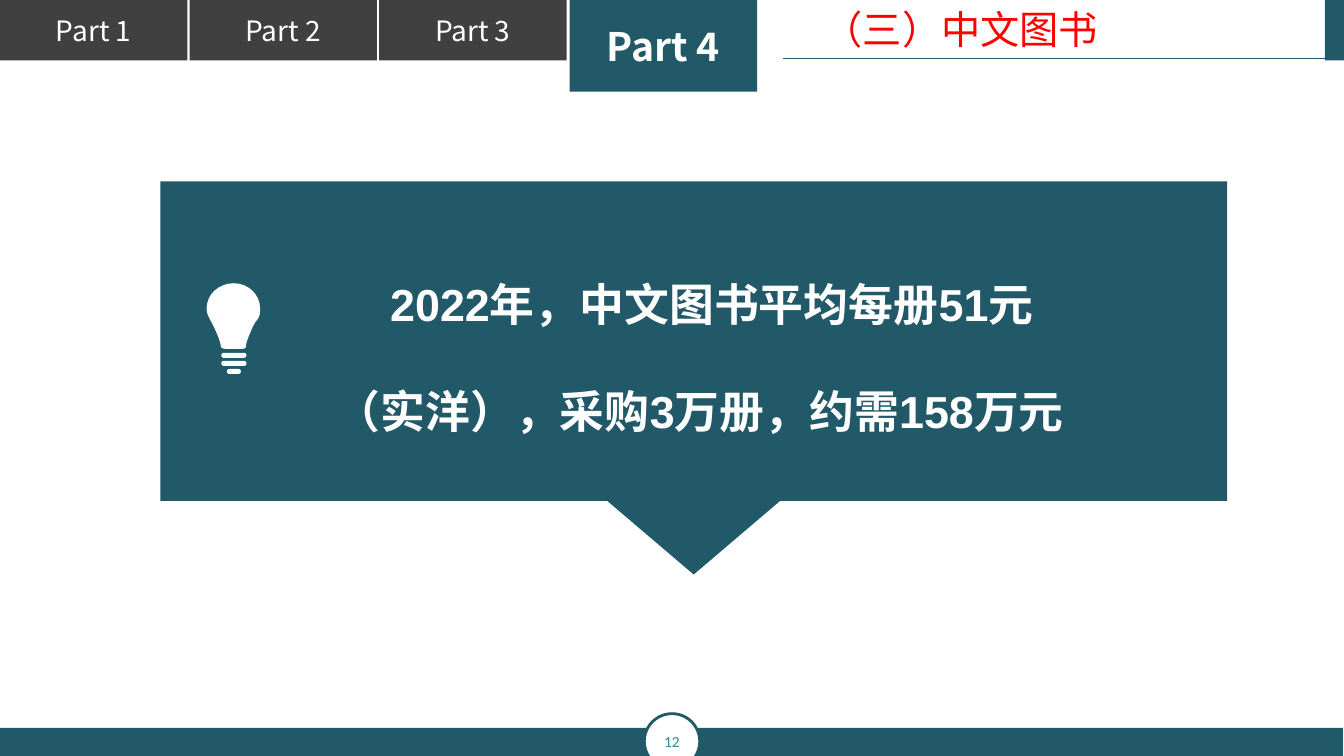
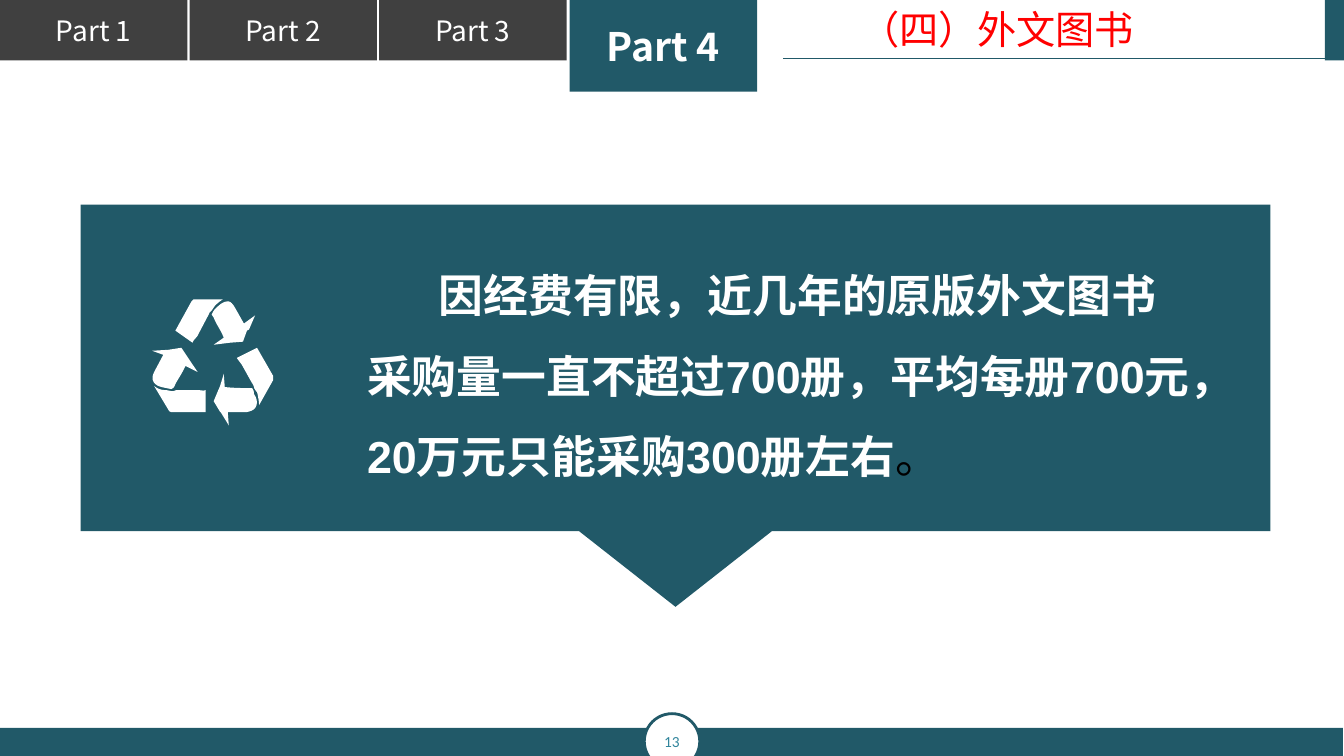
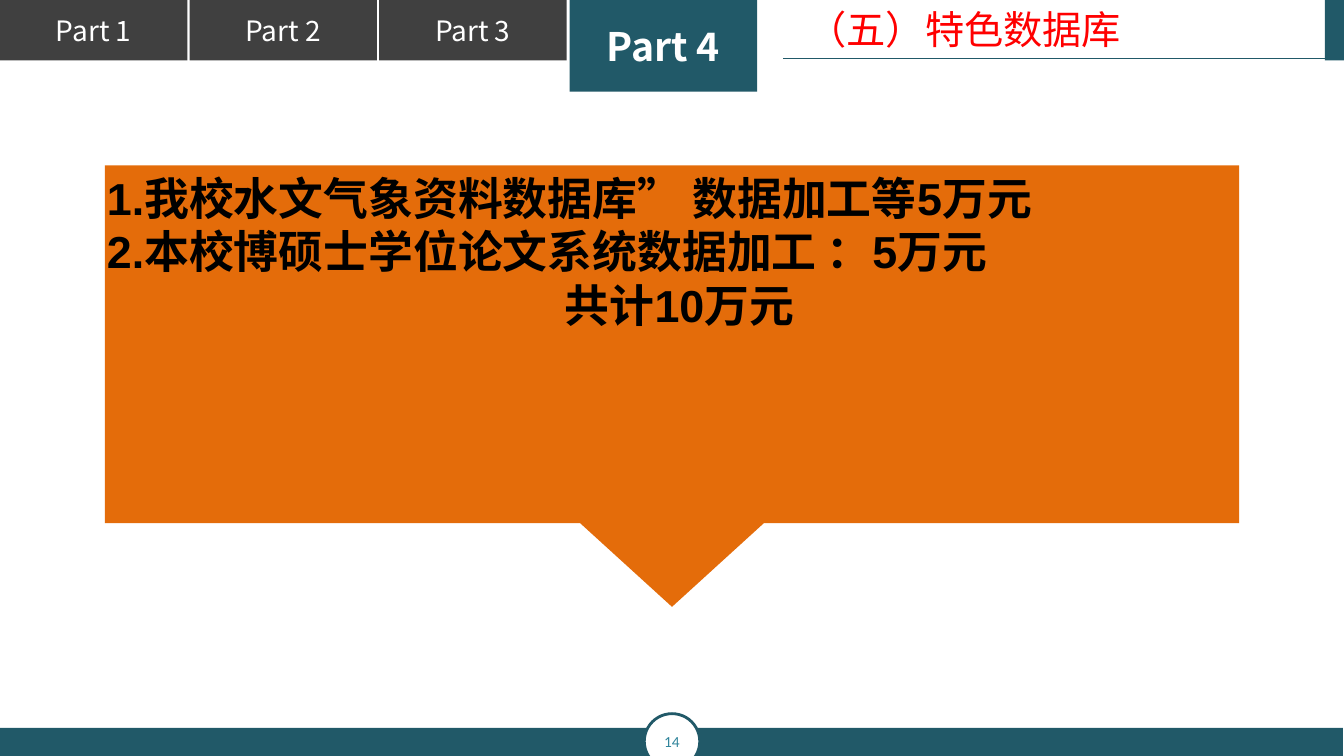
from lxml import etree
from pptx import Presentation
from pptx.dml.color import RGBColor
from pptx.enum.shapes import MSO_CONNECTOR, MSO_SHAPE
from pptx.enum.text import MSO_ANCHOR, MSO_AUTO_SIZE, PP_ALIGN
from pptx.oxml.ns import qn
from pptx.util import Inches, Pt

RECT, OVAL, PILL = MSO_SHAPE.RECTANGLE, MSO_SHAPE.OVAL, MSO_SHAPE.ROUNDED_RECTANGLE
STRAIGHT = MSO_CONNECTOR.STRAIGHT
LEFT, CENTER = PP_ALIGN.LEFT, PP_ALIGN.CENTER
TOP, MIDDLE = MSO_ANCHOR.TOP, MSO_ANCHOR.MIDDLE
FIXED = MSO_AUTO_SIZE.NONE
TEAL, GREY, WHITE, BLACK = "215968", "404040", "FFFFFF", "000000"
RED, ORANGE, AQUA = "FF0000", "E46C0A", "31859C"
SANS, ARIAL, CALIBRI = "Noto Sans CJK SC", "Arial", "Calibri"

BULB = [[
    (2.58, 3.06), (2.58, 2.92, 2.46, 2.81, 2.32, 2.81),
    (2.17, 2.81, 2.05, 2.92, 2.05, 3.06), (2.05, 3.09, 2.06, 3.13, 2.08, 3.16),
    (2.08, 3.17, 2.09, 3.18, 2.1, 3.2), (2.14, 3.27, 2.19, 3.4, 2.19, 3.43),
    (2.19, 3.45, 2.21, 3.46, 2.23, 3.46), (2.41, 3.46),
    (2.43, 3.46, 2.44, 3.45, 2.44, 3.43), (2.44, 3.4, 2.49, 3.27, 2.53, 3.2),
    (2.56, 3.16), (2.58, 3.13, 2.58, 3.09, 2.58, 3.06),
]]
CYCLE = [
    [(2.47, 3.27), (2.45, 3.28), (2.41, 3.39), (2.28, 3.4), (2.12, 3.42), (2.22, 3.35),
     (2.19, 3.27, 2.14, 3.21, 2.12, 3.15), (2.1, 3.12), (2.11, 3.1, 2.12, 3.08, 2.13, 3.07),
     (2.17, 3.03, 2.21, 2.99, 2.26, 2.99), (2.28, 2.99, 2.3, 3, 2.33, 3.05),
     (2.42, 3.21), (2.53, 3.13)],
    [(2.12, 3.05), (2.14, 3.02, 2.18, 2.99, 2.21, 2.97), (1.92, 2.97), (1.9, 2.99),
     (1.74, 3.28), (1.91, 3.4), (1.92, 3.37, 1.95, 3.35, 1.96, 3.33), (2.06, 3.14),
     (2.08, 3.1), (2.1, 3.08, 2.11, 3.07, 2.12, 3.05)],
    [(2.27, 4.22), (2.26, 4.09), (2.44, 4.09), (2.49, 4.08, 2.51, 4.07, 2.53, 4.05),
     (2.56, 4.01, 2.55, 3.95, 2.52, 3.91), (2.52, 3.88, 2.51, 3.86, 2.5, 3.85),
     (2.45, 3.85), (2.4, 3.85, 2.33, 3.85, 2.23, 3.84), (2.22, 3.71), (2.18, 3.84),
     (2.17, 3.86), (2.12, 3.98), (2.18, 4.08), (2.19, 4.09)],
    [(2.55, 3.89), (2.56, 3.93, 2.57, 3.98, 2.57, 4.02), (2.71, 3.77), (2.71, 3.73),
     (2.55, 3.45), (2.35, 3.55), (2.36, 3.57, 2.38, 3.59, 2.4, 3.62), (2.5, 3.8),
     (2.5, 3.8, 2.51, 3.81, 2.52, 3.84), (2.52, 3.85), (2.53, 3.86, 2.53, 3.87, 2.55, 3.89)],
    [(1.51, 3.48), (1.62, 3.52), (1.53, 3.69), (1.51, 3.73, 1.51, 3.76, 1.52, 3.78),
     (1.54, 3.83, 1.6, 3.84, 1.65, 3.85), (1.7, 3.86), (1.72, 3.85, 1.73, 3.84, 1.74, 3.81),
     (1.76, 3.77, 1.81, 3.7, 1.84, 3.63), (1.96, 3.69), (1.88, 3.57), (1.8, 3.45),
     (1.67, 3.47)],
    [(1.65, 3.87), (1.6, 3.87, 1.57, 3.86, 1.53, 3.83), (1.68, 4.08), (1.7, 4.09),
     (2.04, 4.09), (2.04, 3.87), (2.02, 3.88, 1.99, 3.87, 1.96, 3.87), (1.75, 3.87),
     (1.72, 3.88), (1.7, 3.88)],
]


def rgb(code):
    """Turn a hex string into a colour."""
    return RGBColor.from_string(code)


def paint(shape, fill, line=None):
    """Give a shape a flat fill and an optional 2 pt outline."""
    shape.shadow.inherit = False
    shape.fill.solid()
    shape.fill.fore_color.rgb = rgb(fill)
    if line:
        shape.line.color.rgb = rgb(line)
        shape.line.width = Pt(2)
    else:
        shape.line.fill.background()
    return shape


def block(slide, kind, box, fill, line=None):
    """Add a painted preset shape."""
    return paint(slide.shapes.add_shape(kind, *map(Inches, box)), fill, line)


def write(para, text, size, color, font, bold=False):
    """Add one run to a paragraph."""
    run = para.add_run()
    run.text = text
    run.font.size = Pt(size)
    run.font.bold = bold
    run.font.name = font
    run.font.color.rgb = rgb(color)
    etree.SubElement(run.font._element, qn("a:ea")).set("typeface", SANS)


def label(shape, text, size, color, font, bold=False):
    """Write one centred line in a shape."""
    shape.text_frame.vertical_anchor = MIDDLE
    para = shape.text_frame.paragraphs[0]
    para.alignment = CENTER
    write(para, text, size, color, font, bold)


def place(holder, box):
    """Move a placeholder and set its text frame."""
    holder.left, holder.top, holder.width, holder.height = map(Inches, box)
    frame = holder.text_frame
    frame.word_wrap = True
    frame.auto_size = FIXED
    frame.vertical_anchor = TOP
    return frame


def trace(points):
    """Turn points and cubic curves into a list of plain points."""
    path = []
    for item in points:
        if len(item) == 2:
            path.append(item)
            continue
        knots = [path[-1], item[:2], item[2:4], item[4:]]
        for step in range(1, 9):
            t = step / 8
            parts = ((1 - t) ** 3, 3 * t * (1 - t) ** 2, 3 * t * t * (1 - t), t ** 3)
            path.append(tuple(sum(w * k[axis] for w, k in zip(parts, knots)) for axis in (0, 1)))
    return path


def outline(slide, loops, fill):
    """Draw closed loops as one freeform."""
    pen = None
    for loop in loops:
        first, *rest = [(Inches(x), Inches(y)) for x, y in trace(loop)]
        if pen:
            pen.move_to(*first)
        else:
            pen = slide.shapes.build_freeform(*first)
        pen.add_line_segments(rest, close=True)
    return paint(pen.convert_to_shape(), fill)


def callout(slide, box, tip, fill):
    """Draw a panel with a pointer of the given height below it."""
    left, top, width, height = box
    right, base, mid, half = left + width, top + height, left + width / 2, width * 0.081
    outline(slide, [[(left, top), (right, top), (right, base), (mid + half, base),
                     (mid, base + tip), (mid - half, base), (left, base)]], fill)


def bulb(slide):
    """Draw the light bulb."""
    outline(slide, BULB, WHITE)
    for row, wide in enumerate((0.25, 0.25, 0.14)):
        bar = block(slide, PILL, (2.32 - wide / 2, 3.5 + row * 0.08, wide, 0.05), WHITE)
        bar.adjustments[0] = 0.5


def furnish(slide):
    """Draw tabs, rule and bands, and move them to the slide's layout."""
    for part in range(3):
        tab = block(slide, RECT, (part * 1.88, 0, 1.86, 0.6), GREY)
        label(tab, f"Part {part + 1}", 20, WHITE, SANS)
    tab = block(slide, RECT, (5.65, 0, 1.86, 0.91), TEAL)
    label(tab, "Part 4", 28, WHITE, SANS, True)
    block(slide, RECT, (13.14, 0, 0.2, 0.6), TEAL)
    block(slide, RECT, (0, 7.22, 13.32, 0.28), TEAL)
    rule = slide.shapes.add_connector(STRAIGHT, *map(Inches, (13.23, 0.58, 7.77, 0.58)))
    rule.line.color.rgb = rgb(TEAL)
    rule.line.width = Pt(0.75)
    etree.SubElement(rule.element.spPr, qn("a:effectLst"))
    fixed = [shape for shape in slide.shapes if not shape.is_placeholder]
    for num, shape in enumerate(fixed, 100):
        shape.element.xpath(".//p:cNvPr")[0].set("id", str(num))
        slide.slide_layout.shapes.element.append(shape.element)


def head(slide, text, left, width, page):
    """Fill the title and the page badge."""
    para = place(slide.shapes.title, (left, 0, width, 0.57)).paragraphs[0]
    para.alignment = LEFT
    write(para, text, 28, RED, ARIAL)
    badge = block(slide, OVAL, (6.39, 7.08, 0.55, 0.55), WHITE, TEAL)
    label(badge, str(page), 11, AQUA, CALIBRI)


def body(slide, box, paras, space=1.0, indent=0):
    """Fill the body with (alignment, runs) and bring it to the front."""
    holder = slide.placeholders[1]
    slide.shapes.element.append(holder.element)
    frame = place(holder, box)
    for num, (align, runs) in enumerate(paras):
        para = frame.add_paragraph() if num else frame.paragraphs[0]
        para.alignment = align
        para.line_spacing = space
        para.space_before = Pt(0)
        props = para._p.get_or_add_pPr()
        props.set("marL", "0")
        props.set("indent", str(Inches(indent)))
        etree.SubElement(props, qn("a:buNone"))
        for text, color, bold in runs:
            write(para, text, 32, color, ARIAL, bold)


def main():
    """Build the three slides."""
    deck = Presentation()
    deck.slide_width, deck.slide_height = Inches(13.33), Inches(7.5)
    chinese, foreign, data = [deck.slides.add_slide(deck.slide_layouts[1]) for _ in range(3)]
    furnish(chinese)

    head(chinese, "（三）中文图书", 8.07, 3.28, 12)
    callout(chinese, (1.59, 1.8, 10.58, 3.17), 0.73, TEAL)
    bulb(chinese)
    text = "2022年，中文图书平均每册51元（实洋），采购3万册，约需158万元"
    body(chinese, (3.23, 2.16, 7.94, 2.26), [(LEFT, [(text, WHITE, True)])], 2.0, 0.54)

    head(foreign, "（四）外文图书", 8.43, 3.55, 13)
    callout(foreign, (0.8, 2.03, 11.8, 3.24), 0.75, TEAL)
    outline(foreign, CYCLE, WHITE)
    text = ("因经费有限，近几年的原版外文图书采购量一直不超过700册，"
            "平均每册700元，20万元只能采购300册左右")
    runs = [(text, WHITE, True), ("。", BLACK, False)]
    body(foreign, (3.54, 2.34, 8.44, 2.52), [(LEFT, runs)], 1.5, 0.71)

    head(data, "（五）特色数据库", 7.91, 4.77, 14)
    callout(data, (1.04, 1.64, 11.25, 3.55), 0.83, ORANGE)
    lines = [
        (LEFT, "1.我校水文气象资料数据库” 数据加工等5万元"),
        (LEFT, "2.本校博硕士学位论文系统数据加工 ：5万元"),
        (CENTER, "共计10万元"),
    ]
    body(data, (0.96, 1.64, 11.56, 2.12),
         [(align, [(line, BLACK, True)]) for align, line in lines])

    deck.save("out.pptx")


if __name__ == "__main__":
    main()
